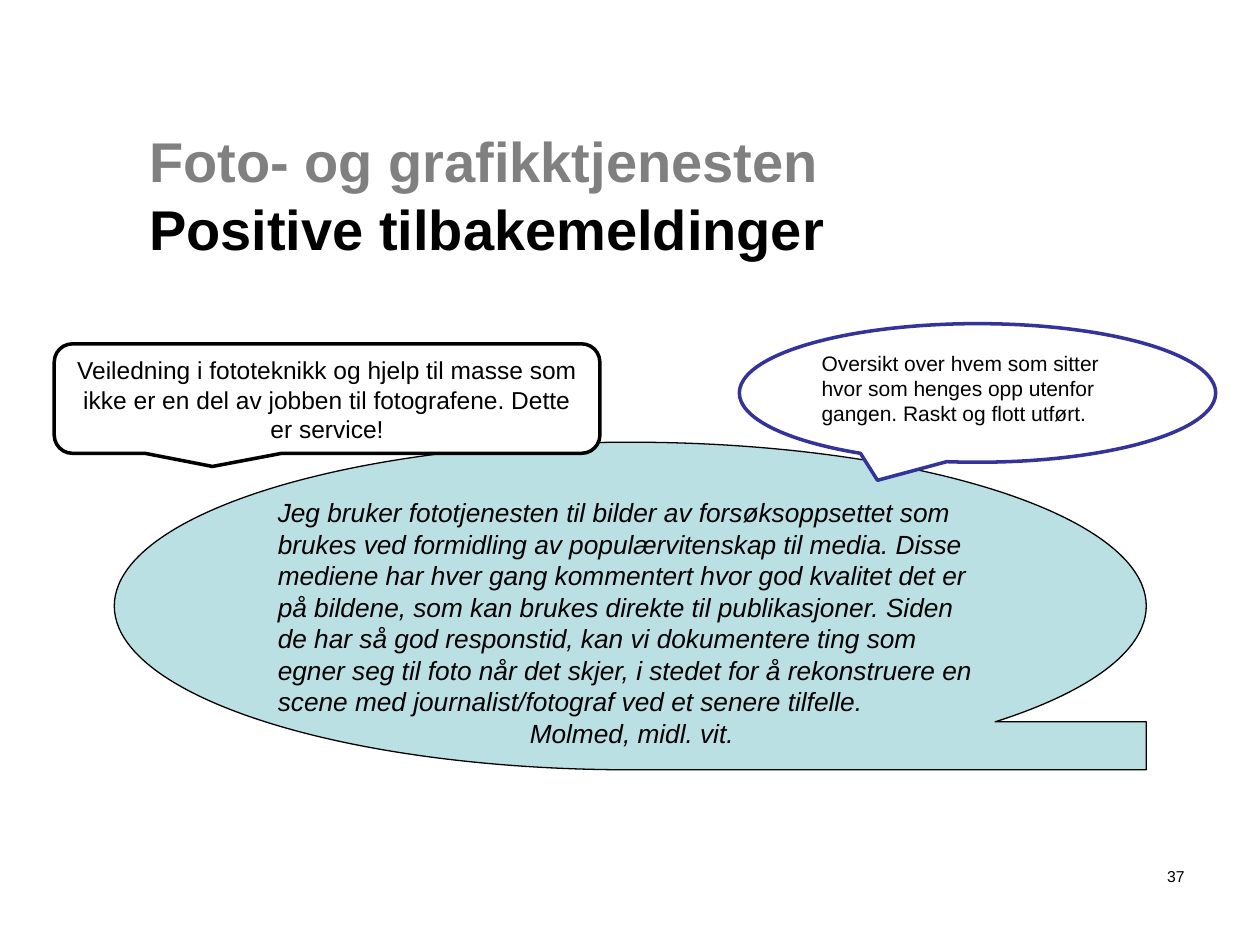
from lxml.etree import SubElement
from pptx import Presentation
from pptx.dml.color import RGBColor
from pptx.enum.shapes import MSO_SHAPE
from pptx.enum.text import MSO_ANCHOR, MSO_AUTO_SIZE, PP_ALIGN
from pptx.oxml.ns import qn
from pptx.util import Pt

BLACK = RGBColor(0x00, 0x00, 0x00)
GREY = RGBColor(0x80, 0x80, 0x80)
WHITE = RGBColor(0xFF, 0xFF, 0xFF)
TEAL = RGBColor(0xBB, 0xE0, 0xE3)
INDIGO = RGBColor(0x33, 0x33, 0x99)

LONG_QUOTE = (
    "Jeg bruker fototjenesten til bilder av forsøksoppsettet som brukes ved "
    "formidling av populærvitenskap til media. Disse mediene har hver gang "
    "kommentert hvor god kvalitet det er på bildene, som kan brukes direkte til "
    "publikasjoner. Siden de har så god responstid, kan vi dokumentere ting som "
    "egner seg til foto når det skjer, i stedet for å rekonstruere en scene med "
    "journalist/fotograf ved et senere tilfelle."
)
SEATING_QUOTE = (
    "Oversikt over hvem som sitter hvor som henges opp utenfor gangen. "
    "Raskt og flott utført."
)
GUIDANCE_QUOTE = (
    "Veiledning i fototeknikk og hjelp til masse som ikke er en del av jobben "
    "til fotografene. Dette er service!"
)


def style_font(font, size, color=BLACK, bold=False, italic=False):
    font.name = "Arial"
    font.size = Pt(size)
    font.color.rgb = color
    font.bold = bold
    font.italic = italic


def fill_text(frame, text, size, align=PP_ALIGN.LEFT, italic=False):
    frame.word_wrap = True
    frame.vertical_anchor = MSO_ANCHOR.TOP
    frame.text = text
    for paragraph in frame.paragraphs:
        paragraph.alignment = align
        for span in paragraph.runs:
            style_font(span.font, size, italic=italic)


def set_title(page, lines):
    """Fill the title placeholder with (text, colour) lines in one paragraph."""
    title = page.shapes.title
    title.left, title.top, title.width, title.height = Pt(78), Pt(66), Pt(606), Pt(90)
    frame = title.text_frame
    frame.auto_size = MSO_AUTO_SIZE.NONE
    frame.vertical_anchor = MSO_ANCHOR.MIDDLE
    paragraph = frame.paragraphs[0]
    paragraph.text = "\v".join(text for text, _ in lines)
    paragraph.alignment = PP_ALIGN.LEFT
    for span, (_, color) in zip(paragraph.runs, lines):
        style_font(span.font, 32, color, bold=True)


def add_bubble(page, kind, bounds, fill, line, weight, tip=()):
    """Add a speech shape; tip is the pointer offset from the centre."""
    bubble = page.shapes.add_shape(kind, *map(Pt, bounds))
    bubble.shadow.inherit = False
    bubble.fill.solid()
    bubble.fill.fore_color.rgb = fill
    bubble.line.color.rgb = line
    bubble.line.width = Pt(weight)
    for index, offset in enumerate(tip):
        bubble.adjustments[index] = offset
    return bubble.text_frame


def add_tab_stop(paragraph, position):
    stops = SubElement(paragraph._p.get_or_add_pPr(), qn("a:tabLst"))
    SubElement(stops, qn("a:tab"), pos=str(Pt(position)), algn="l")


def add_page_number(page, number):
    box = page.shapes.add_textbox(Pt(630), Pt(492), Pt(54), Pt(36))
    fill_text(box.text_frame, number, 9, PP_ALIGN.RIGHT)


def main():
    deck = Presentation()
    deck.slide_width, deck.slide_height = Pt(720), Pt(540)
    page = deck.slides.add_slide(deck.slide_layouts[5])

    set_title(page, [("Foto- og grafikktjenesten", GREY),
                     ("Positive tilbakemeldinger", BLACK)])
    add_page_number(page, "37")

    tape = add_bubble(page, MSO_SHAPE.FLOWCHART_SEQUENTIAL_ACCESS_STORAGE,
                      (65.3, 252.7, 589.7, 187.2), TEAL, BLACK, 0.75)
    fill_text(tape, LONG_QUOTE + "\n\tMolmed, midl. vit.", 15, italic=True)
    add_tab_stop(tape.paragraphs[1], 144)

    oval = add_bubble(page, MSO_SHAPE.OVAL_CALLOUT,
                      (422.5, 185, 272.2, 79.2), WHITE, INDIGO, 2, (-0.21, 0.63))
    fill_text(oval, SEATING_QUOTE, 12)

    rounded = add_bubble(page, MSO_SHAPE.ROUNDED_RECTANGULAR_CALLOUT,
                         (31, 196.5, 311.8, 62.6), WHITE, BLACK, 2, (-0.21, 0.62))
    fill_text(rounded, GUIDANCE_QUOTE, 14, PP_ALIGN.CENTER)

    deck.save("out.pptx")


if __name__ == "__main__":
    main()
